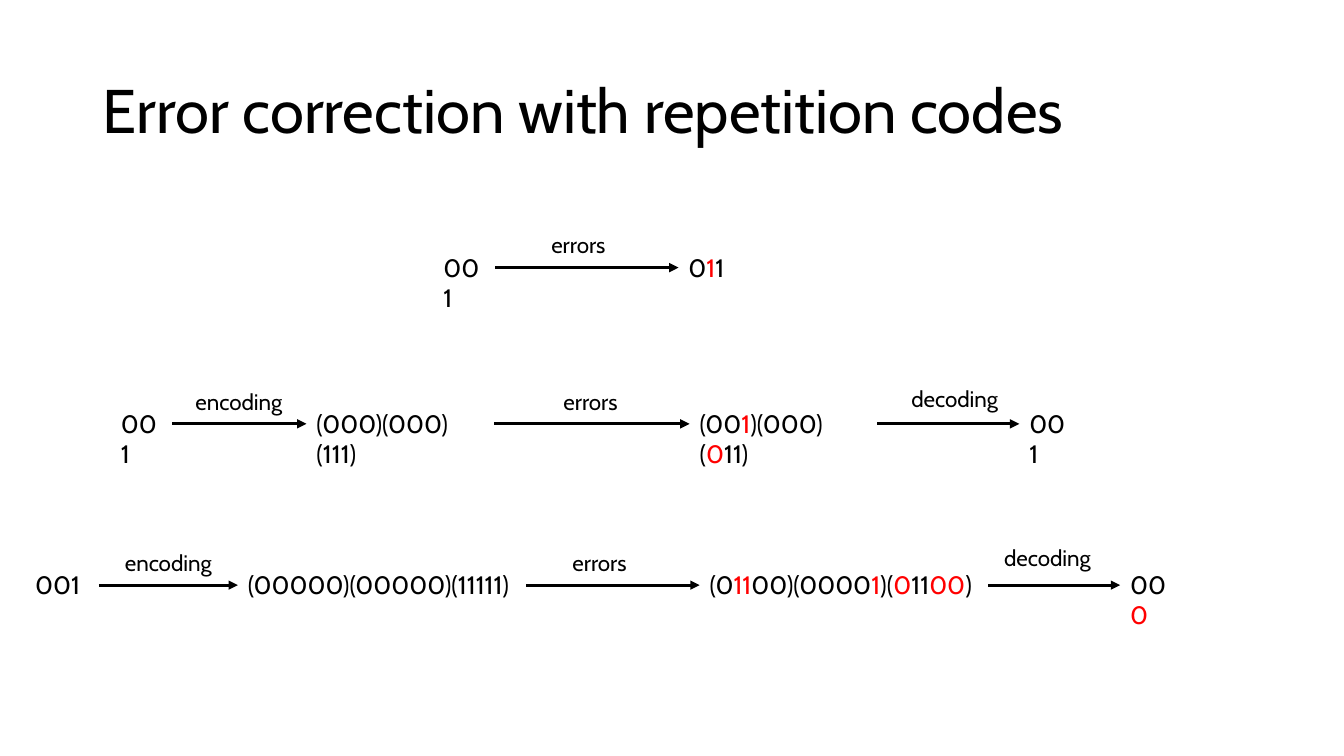
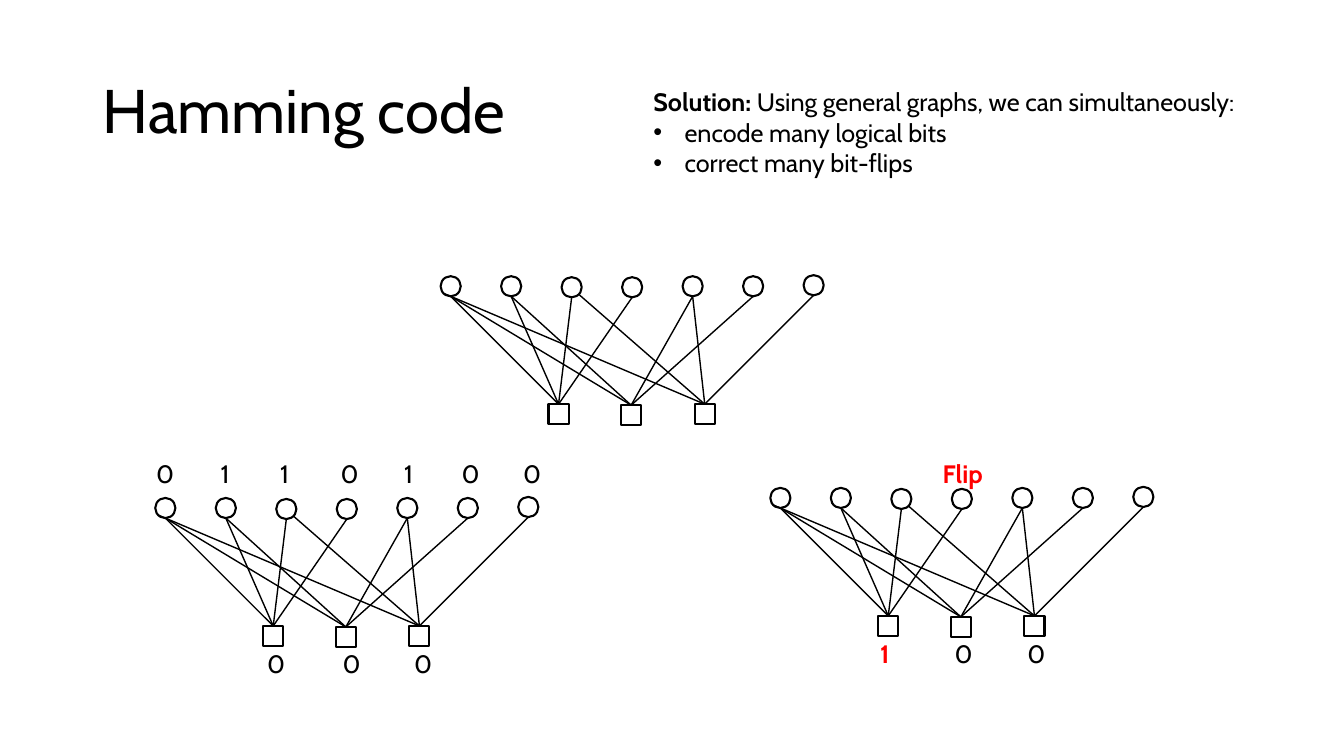
"""Build two slides on repetition codes and the Hamming code."""
from dataclasses import dataclass
from typing import Any, NamedTuple

from lxml.etree import SubElement as Sub
from pptx import Presentation as Deck
from pptx.dml.color import RGBColor as Color
from pptx.enum.shapes import MSO_CONNECTOR as Link, MSO_SHAPE as Form
from pptx.enum.text import MSO_ANCHOR as Anchor, MSO_AUTO_SIZE as Fit, PP_ALIGN as Align
from pptx.oxml.ns import qn
from pptx.util import Inches, Pt


@dataclass(frozen=True)
class Theme:
    font: str = "Cabin"
    ink: Color = Color(0, 0, 0)
    paper: Color = Color(255, 255, 255)
    alert: Color = Color(255, 0, 0)
    head: float = 44
    text: float = 18
    small: float = 16
    arrow: float = 2.25
    edge: float = 1.5
    thin: float = 1


class Word(NamedTuple):
    text: str
    left: float
    width: float


class Label(NamedTuple):
    text: str
    left: float
    top: float


class Row(NamedTuple):
    top: float
    words: tuple[Word, ...]
    labels: tuple[Label, ...]


class Graph(NamedTuple):
    left: float
    top: float


THEME = Theme()
FRAME = {"word_wrap": True, "auto_size": Fit.NONE, "vertical_anchor": Anchor.TOP}
HEAD = {"alignment": Align.LEFT, "line_spacing": 0.9}
LIST = {"alignment": Align.LEFT, "line_spacing": 1.0, "space_before": Pt(0)}

ROWS = (
    Row(2.45, (Word("001", 4.3, 0.61), Word("0*1*1", 6.73, 0.61)),
        (Label("errors", 5.37, 2.24),)),
    Row(4, (Word("001", 1.1, 0.61), Word("(000)(000)(111)", 3.04, 1.86),
            Word("(00*1*)(000)(*0*11)", 6.84, 1.86), Word("001", 10.11, 0.61)),
        (Label("encoding", 1.84, 3.8), Label("errors", 5.49, 3.8),
         Label("decoding", 8.94, 3.77))),
    Row(5.6, (Word("001", 0.25, 0.73), Word("(00000)(00000)(11111)", 2.36, 2.86),
              Word("(0*11*00)(0000*1*)(*0*11*00*)", 6.94, 2.86),
              Word("00*0*", 11.11, 0.61)),
        (Label("encoding", 1.14, 5.4), Label("errors", 5.58, 5.4),
         Label("decoding", 9.86, 5.35))),
)

GRAPHS = (Graph(4.37, 2.73), Graph(7.64, 4.83), Graph(1.54, 4.93))
NODE = 0.2
STEP = 0.6
DROPS = (0.01, 0.01, 0.02, 0.02, 0.01, 0.01, 0)
CHECKS = ((1.07, 1.28), (1.79, 1.29), (2.52, 1.28))
LINKS = ((0, 1, 2, 3), (0, 1, 4, 5), (0, 2, 4, 6))
SHIFTS = {(2, 0): (-0.07, -0.03), (2, 2): (0.07, -0.03)}

BITS = tuple(Label(bit, left, 4.5) for bit, left in zip(
    "0110100", (1.45, 2.09, 2.68, 3.28, 3.91, 4.48, 5.09)))
SUMS = tuple(Label("0", left, 6.38) for left in (2.55, 3.3, 4.01))
TESTS = (Label("0", 9.37, 6.28), Label("0", 10.09, 6.28))
FLIPS = (Label("*Flip*", 9.25, 4.5), Label("*1*", 8.63, 6.28))
POINTS = ("encode many logical bits", "correct many bit-flips")


def apply(item: Any, values: dict[str, Any]) -> None:
    for name, value in values.items():
        setattr(item, name, value)


def place(shape: Any, left: float, top: float, width: float, height: float) -> None:
    sides = {"left": left, "top": top, "width": width, "height": height}
    apply(shape, {name: Inches(size) for name, size in sides.items()})


def write(para: Any, text: str, size: float, bold: bool = False,
          color: Color = THEME.ink) -> None:
    run = para.add_run()
    run.text = text
    apply(run.font, {"name": THEME.font, "size": Pt(size), "bold": bold})
    run.font.color.rgb = color


def add_text(slide: Any, text: str, left: float, top: float, width: float,
             height: float, size: float = THEME.text, bold: bool = False) -> Any:
    box = slide.shapes.add_textbox(*map(Inches, (left, top, width, height)))
    apply(box.text_frame, FRAME)
    for spot, part in enumerate(text.split("*")):
        if part:
            color = THEME.alert if spot % 2 else THEME.ink
            write(box.text_frame.paragraphs[0], part, size, bold, color)
    return box


def add_line(slide: Any, start: Any, site: int, end: tuple[float, float],
             weight: float) -> Any:
    x, y = map(Inches, end)
    line = slide.shapes.add_connector(Link.STRAIGHT, x, y, x, y)
    line.begin_connect(start, site)
    line.line.color.rgb = THEME.ink
    line.line.width = Pt(weight)
    Sub(line._element.spPr, qn("a:effectLst"))
    return line


def add_arrow(slide: Any, start: Any, end: Any) -> None:
    line = add_line(slide, start, 3, (0, 0), THEME.arrow)
    line.end_connect(end, 1)
    Sub(line.line._get_or_add_ln(), qn("a:tailEnd"), type="triangle")


def add_node(slide: Any, form: Any, left: float, top: float) -> Any:
    node = slide.shapes.add_shape(form, *map(Inches, (left, top, NODE, NODE)))
    node.shadow.inherit = False
    node.fill.solid()
    node.fill.fore_color.rgb = THEME.paper
    node.line.color.rgb = THEME.ink
    node.line.width = Pt(THEME.edge)
    return node


def add_row(slide: Any, row: Row) -> None:
    boxes = [add_text(slide, word.text, word.left, row.top, word.width, 0.41)
             for word in row.words]
    for start, end in zip(boxes, boxes[1:]):
        add_arrow(slide, start, end)
    for label in row.labels:
        width = 0.77 if label.text == "errors" else 1.1
        add_text(slide, *label, width, 0.37, THEME.small)


def add_graph(slide: Any, graph: Graph) -> None:
    bits = [(graph.left + spot * STEP, graph.top + drop)
            for spot, drop in enumerate(DROPS)]
    for left, top in bits:
        add_node(slide, Form.OVAL, left, top)
    for spot, (left, top) in enumerate(CHECKS):
        check = add_node(slide, Form.RECTANGLE, graph.left + left, graph.top + top)
        for bit in LINKS[spot]:
            dx, dy = SHIFTS.get((spot, bit), (0, 0))
            x, y = bits[bit]
            add_line(slide, check, 0, (x + NODE / 2 + dx, y + NODE + dy), THEME.thin)


def add_list(body: Any) -> None:
    place(body, 6.38, 0.81, 6.67, 1.01)
    frame = body.text_frame
    apply(frame, FRAME)
    first = frame.paragraphs[0]
    write(first, "Solution:", THEME.text, True)
    write(first, " Using general graphs, we can simultaneously:", THEME.text)
    for point in POINTS:
        write(frame.add_paragraph(), point, THEME.text)
    for spot, para in enumerate(frame.paragraphs):
        apply(para, LIST)
        props = para._p.get_or_add_pPr()
        dent = Inches(0.31) if spot else 0
        props.set("marL", str(dent))
        props.set("indent", str(-dent))
        if spot:
            Sub(props, qn("a:buChar"), char="•")
        else:
            Sub(props, qn("a:buNone"))


def add_slide(deck: Any, layout: int, text: str) -> Any:
    slide = deck.slides.add_slide(deck.slide_layouts[layout])
    title = slide.shapes.title
    place(title, 0.92, 0.4, 11.5, 1.45)
    apply(title.text_frame, FRAME | {"vertical_anchor": Anchor.MIDDLE})
    para = title.text_frame.paragraphs[0]
    apply(para, HEAD)
    write(para, text, THEME.head)
    return slide


def main() -> None:
    deck = Deck()
    apply(deck, {"slide_width": Inches(13.33), "slide_height": Inches(7.5)})
    slide = add_slide(deck, 5, "Error correction with repetition codes")
    for row in ROWS:
        add_row(slide, row)
    slide = add_slide(deck, 1, "Hamming code")
    add_list(slide.placeholders[1])
    for graph in GRAPHS:
        add_graph(slide, graph)
    for label in BITS + SUMS + TESTS:
        add_text(slide, *label, 0.38, 0.4)
    for label in FLIPS:
        add_text(slide, *label, 0.65 if "Flip" in label.text else 0.32, 0.4, bold=True)
    deck.save("out.pptx")


if __name__ == "__main__":
    main()
